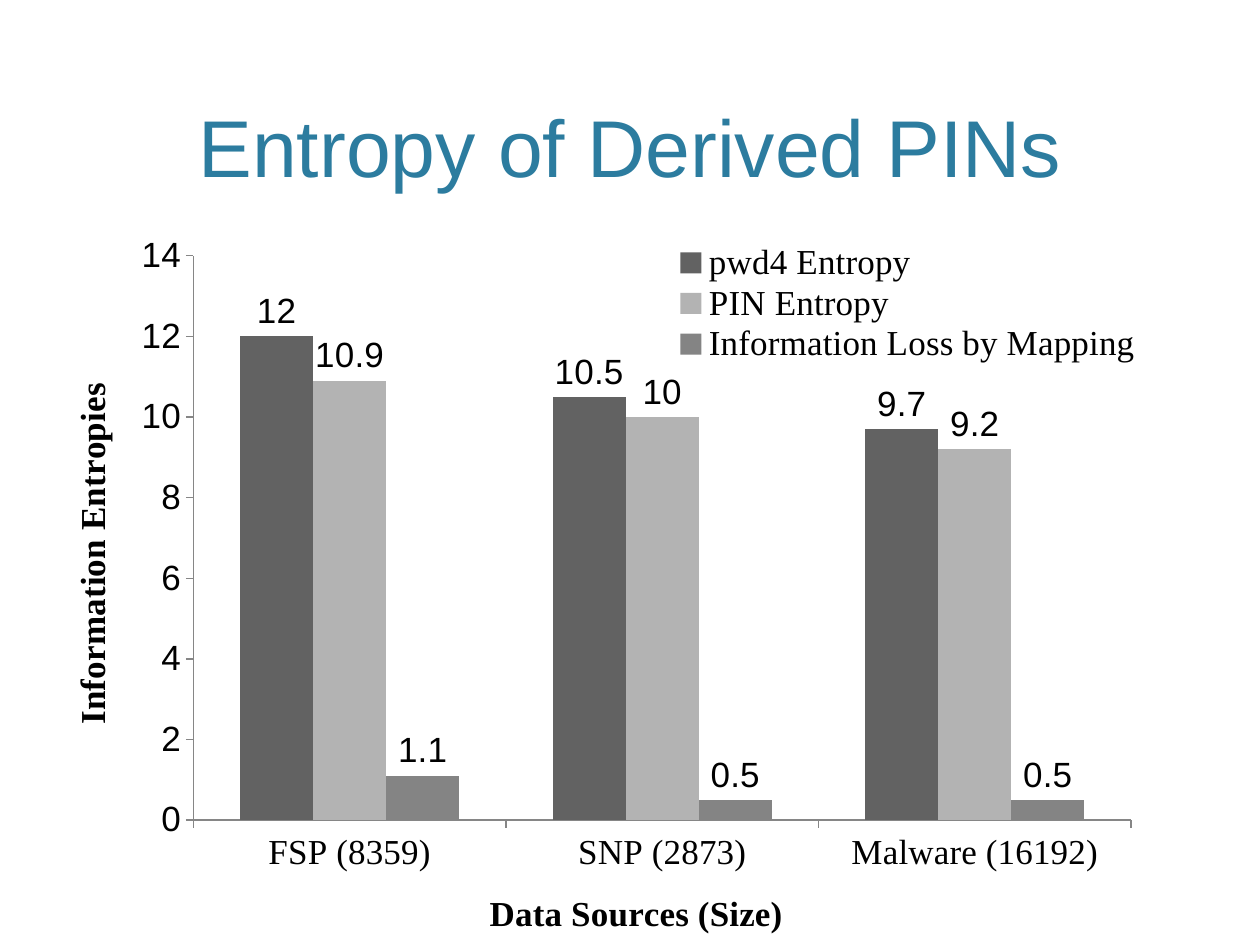
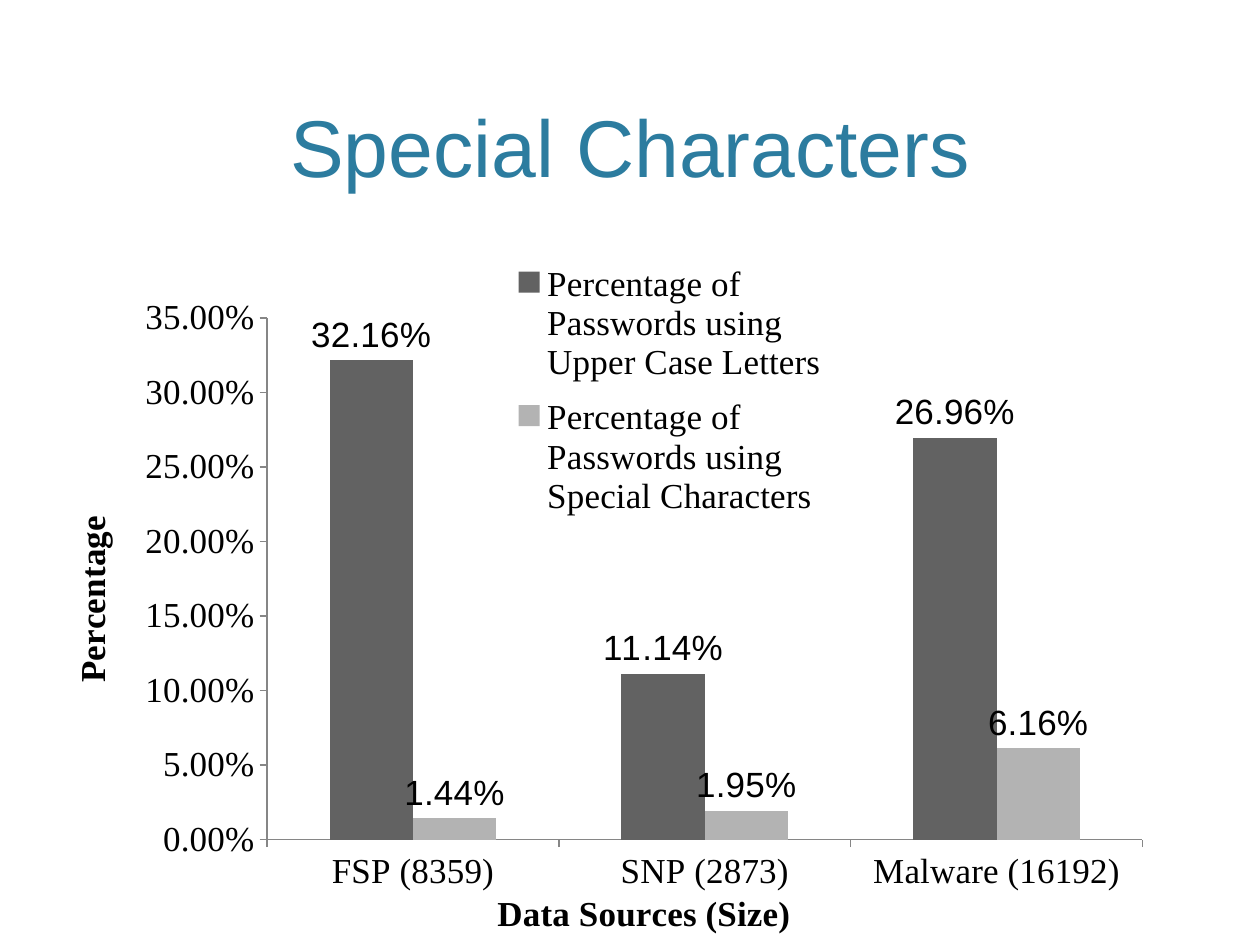
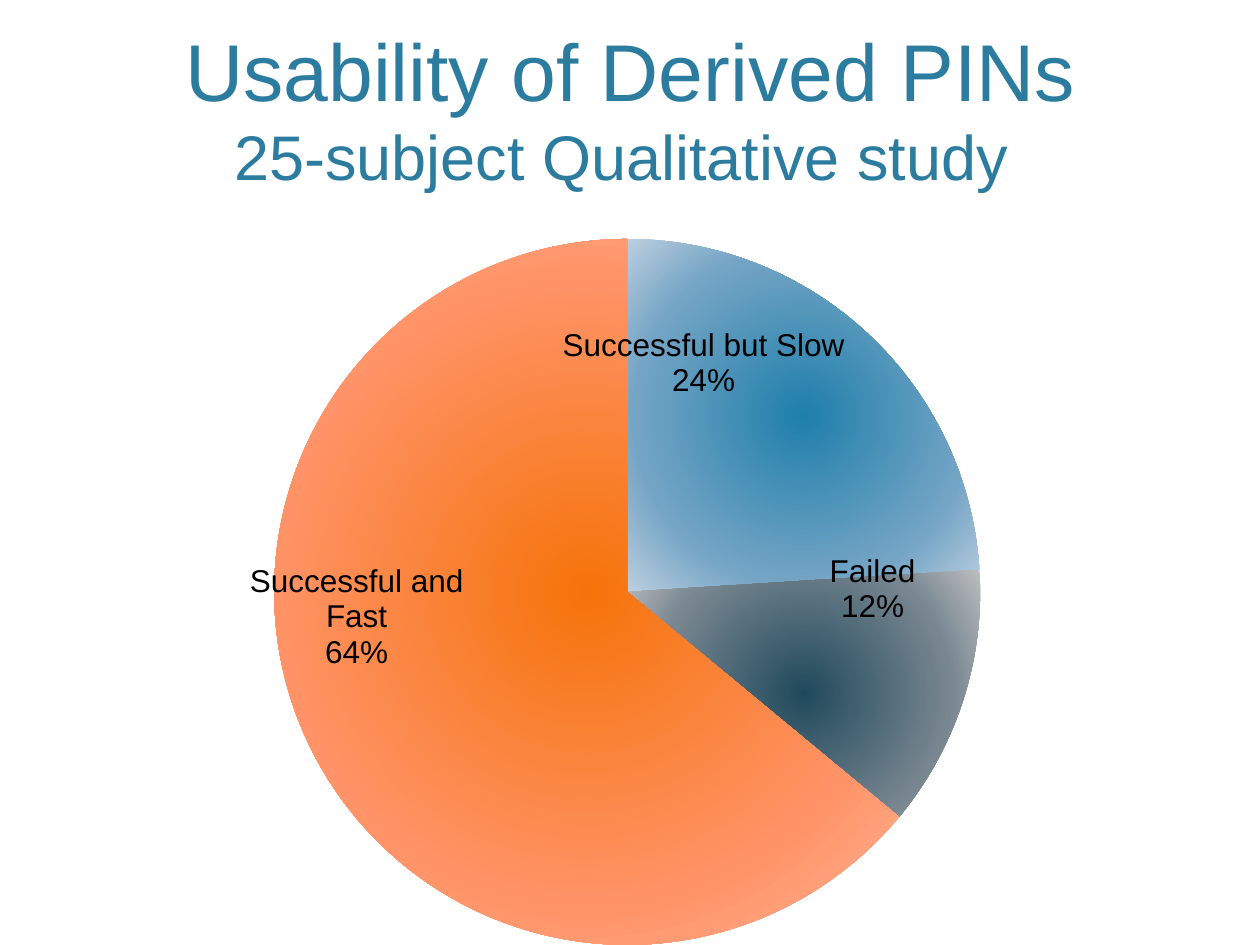
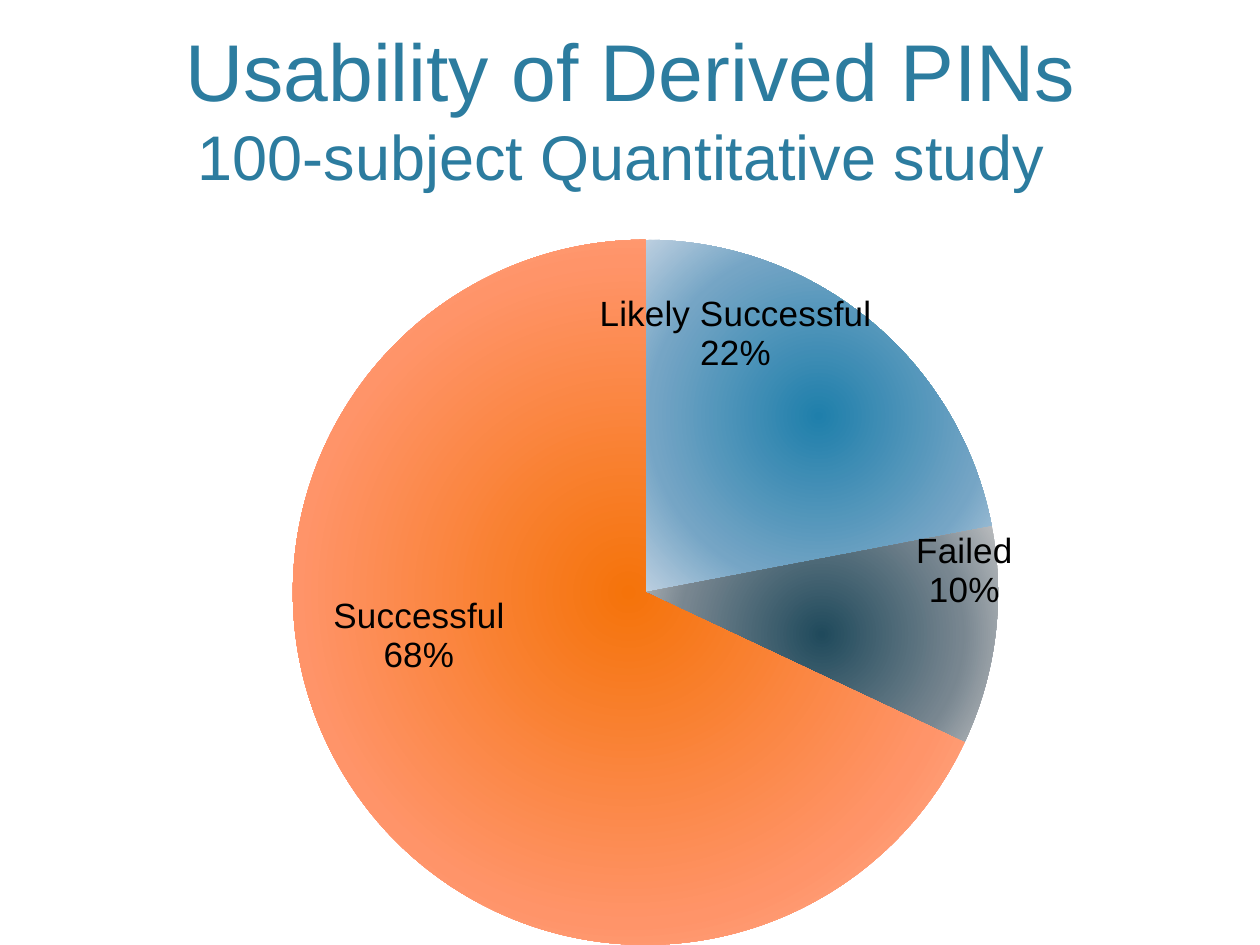
from pptx import Presentation
from pptx.chart.data import CategoryChartData
from pptx.dml.color import RGBColor
from pptx.enum.chart import XL_CHART_TYPE, XL_LABEL_POSITION, XL_LEGEND_POSITION, XL_TICK_MARK
from pptx.enum.text import MSO_ANCHOR, PP_ALIGN
from pptx.oxml import parse_xml
from pptx.oxml.ns import nsdecls, qn
from pptx.util import Inches, Pt

WIDTH, HEIGHT = Inches(10), Inches(7.5)
TITLE_BOX = (0.06, 0.016, 0.88, 0.195)
COLUMN_BOX = (0.05, 0.233, 0.9, 0.767)
PIE_BOX = (0.06, 0.24, 0.88, 0.76)

SANS, SERIF = "Arial", "Times New Roman"
BLACK = RGBColor(0x00, 0x00, 0x00)
TITLE_BLUE = RGBColor(0x2C, 0x7C, 0x9F)
AXIS_GRAY = RGBColor(0x86, 0x86, 0x86)
COLUMN_GRAYS = (RGBColor(0x62, 0x62, 0x62), RGBColor(0xB3, 0xB3, 0xB3), RGBColor(0x84, 0x84, 0x84))
SLICE_GRADIENTS = (
    (RGBColor(0x1F, 0x7F, 0xAB), RGBColor(0x75, 0xA5, 0xC5), RGBColor(0xBC, 0xCF, 0xE0)),
    (RGBColor(0x20, 0x4A, 0x5C), RGBColor(0x78, 0x86, 0x90), RGBColor(0xBC, 0xBE, 0xC0)),
    (RGBColor(0xF5, 0x73, 0x0A), RGBColor(0xFF, 0x94, 0x69), RGBColor(0xFF, 0xB4, 0x98)),
)
SOURCES = ("FSP (8359)", "SNP (2873)", "Malware (16192)")


def place(box):
    """Turn shares of the slide into left, top, width and height."""
    left, top, width, height = box
    return int(left * WIDTH), int(top * HEIGHT), int(width * WIDTH), int(height * HEIGHT)


def format_font(font, size=20, name=SANS, color=BLACK, bold=False):
    """Apply size, face, colour and weight to a font."""
    font.size, font.name, font.bold = Pt(size), name, bold
    font.color.rgb = color


def add_text(paragraph, text, **style):
    """Append a formatted run to a paragraph."""
    run = paragraph.add_run()
    run.text = text
    format_font(run.font, **style)


def add_title(slide, box, title, subtitle=None):
    """Place the centred slide title with an optional smaller second line."""
    frame = slide.shapes.add_textbox(*place(box)).text_frame
    frame.word_wrap = True
    frame.vertical_anchor = MSO_ANCHOR.BOTTOM
    paragraph = frame.paragraphs[0]
    paragraph.alignment = PP_ALIGN.CENTER
    add_text(paragraph, title, size=46, color=TITLE_BLUE)
    if subtitle:
        paragraph.add_line_break()
        add_text(paragraph, subtitle, size=36, color=TITLE_BLUE)


def set_layout(element, index, position, target=None, edge=True):
    """Give a chart part a manual layout in shares of the chart."""
    for old in element.findall(qn("c:layout")):
        element.remove(old)
    names = ("x", "y", "w", "h")[:len(position)]
    parts = f'<c:layoutTarget val="{target}"/>' if target else ""
    if edge:
        parts += '<c:xMode val="edge"/><c:yMode val="edge"/>'
    parts += "".join(f'<c:{name} val="{value}"/>' for name, value in zip(names, position))
    element.insert(index, parse_xml(
        f'<c:layout {nsdecls("c")}><c:manualLayout>{parts}</c:manualLayout></c:layout>'))


def add_chart(slide, box, kind, categories, series, plot_area, number_format="General"):
    """Add a chart without title whose plot area has a fixed place."""
    data = CategoryChartData(number_format=number_format)
    data.categories = categories
    for name, values in series:
        data.add_series(name, values)
    chart = slide.shapes.add_chart(kind, *place(box), data).chart
    chart.has_title = chart.has_legend = False
    format_font(chart.font)
    area = chart.plots[0]._element.getparent()
    set_layout(area, 0, plot_area, target="inner")
    return chart


def format_axis(axis, title, face):
    """Style an axis line, its labels and its bold title."""
    axis.has_major_gridlines = False
    axis.major_tick_mark = XL_TICK_MARK.OUTSIDE
    axis.format.line.color.rgb = AXIS_GRAY
    format_font(axis.tick_labels.font, name=face)
    axis.has_title = True
    add_text(axis.axis_title.text_frame.paragraphs[0], title, name=SERIF, bold=True)


def add_column_chart(slide, box, series, value_title, plot_area, legend_area, top, step,
                     gap=150, number_format="General", value_face=SANS):
    """Add a clustered column chart comparing the data sources."""
    chart = add_chart(slide, box, XL_CHART_TYPE.COLUMN_CLUSTERED, SOURCES, series,
                      plot_area, number_format)
    format_axis(chart.category_axis, "Data Sources (Size)", SERIF)
    axis = chart.value_axis
    format_axis(axis, value_title, value_face)
    axis.minimum_scale, axis.maximum_scale, axis.major_unit = 0, top, step
    axis.tick_labels.number_format = number_format
    axis.tick_labels.number_format_is_linked = False

    plot = chart.plots[0]
    plot.gap_width, plot.overlap, plot.vary_by_categories = gap, 0, False
    for column, color in zip(plot.series, COLUMN_GRAYS):
        column.format.fill.solid()
        column.format.fill.fore_color.rgb = color
        labels = column.data_labels
        labels.show_value = True
        labels.position = XL_LABEL_POSITION.OUTSIDE_END
        labels.number_format = number_format
        labels.number_format_is_linked = False
        format_font(labels.font)

    chart.has_legend = True
    legend = chart.legend
    legend.position = XL_LEGEND_POSITION.RIGHT
    legend.include_in_layout = False
    format_font(legend.font, name=SERIF)
    set_layout(legend._element, 1, legend_area)


def fill_radial(point, colors):
    """Fill a slice with a gradient that runs outwards from its centre."""
    point.format.line.fill.background()
    stops = "".join(f'<a:gs pos="{position}"><a:srgbClr val="{color}"/></a:gs>'
                    for position, color in zip((0, 68000, 100000), colors))
    gradient = parse_xml(
        f'<a:gradFill {nsdecls("a")} rotWithShape="1"><a:gsLst>{stops}</a:gsLst>'
        '<a:path path="circle"><a:fillToRect l="50000" t="50000" r="50000" b="50000"/></a:path>'
        '</a:gradFill>')
    point._element.find(f'.//{qn("c:dPt")}[last()]/{qn("c:spPr")}').insert(0, gradient)


def add_pie_chart(slide, box, slices, offsets, plot_area, label_size):
    """Add a pie chart with category and percentage on each slice."""
    categories, values = zip(*slices)
    chart = add_chart(slide, box, XL_CHART_TYPE.PIE, categories, [("Series 1", values)], plot_area)
    chart.plots[0].vary_by_categories = True
    series = chart.plots[0].series[0]
    for index, colors in enumerate(SLICE_GRADIENTS):
        point = series.points[index]
        fill_radial(point, colors)
        format_font(point.data_label.font, size=label_size)
        point.data_label.position = XL_LABEL_POSITION.CENTER
    labels = series.data_labels
    labels.show_value, labels.show_category_name, labels.show_percentage = False, True, True
    format_font(labels.font, size=label_size)
    for label, offset in zip(series._element.iter(qn("c:dLbl")), offsets):
        for name, value in (("showVal", "0"), ("showCatName", "1"), ("showPercent", "1")):
            label.find(qn(f"c:{name}")).set("val", value)
        label.append(parse_xml(f'<c:separator {nsdecls("c")}>\n</c:separator>'))
        set_layout(label, 1, offset, edge=False)


def main():
    """Build the four slides and save them."""
    presentation = Presentation()
    presentation.slide_width, presentation.slide_height = WIDTH, HEIGHT
    pages = (
        ("Entropy of Derived PINs", None, add_column_chart, COLUMN_BOX, dict(
            series=(("pwd4 Entropy", (12, 10.5, 9.7)),
                    ("PIN Entropy", (10.9, 10, 9.2)),
                    ("Information Loss by Mapping", (1.1, 0.5, 0.5))),
            value_title="Information Entropies", top=14, step=2, gap=128,
            plot_area=(0.115, 0.049, 0.827, 0.779), legend_area=(0.54, 0.03, 0.41, 0.17))),
        ("Special Characters", None, add_column_chart, COLUMN_BOX, dict(
            series=(("Percentage of Passwords using Upper Case Letters", (0.3216, 0.1114, 0.2696)),
                    ("Percentage of Passwords using Special Characters", (0.0144, 0.0195, 0.0616))),
            value_title="Percentage ", top=0.35, step=0.05,
            number_format="0.00%", value_face=SERIF,
            plot_area=(0.18, 0.135, 0.772, 0.72), legend_area=(0.39, 0.04, 0.29, 0.39))),
        ("Usability of Derived PINs", "25-subject Qualitative study ", add_pie_chart, PIE_BOX, dict(
            slices=(("Successful but Slow ", 24), ("Failed", 12), ("Successful and Fast", 64)),
            offsets=((-0.04, -0.14), (0.07, -0.08), (-0.1, -0.07)),
            plot_area=(0.016, 0.017, 0.963, 0.983), label_size=18)),
        ("Usability of Derived PINs", "100-subject Quantitative study ", add_pie_chart, PIE_BOX, dict(
            slices=(("Likely Successful", 22), ("Failed", 10), ("Successful", 68)),
            offsets=((-0.02, -0.17), (0.13, -0.06), (-0.07, -0.07)),
            plot_area=(0.028, 0.018, 0.972, 0.982), label_size=20)),
    )
    for title, subtitle, build, box, content in pages:
        slide = presentation.slides.add_slide(presentation.slide_layouts[6])
        add_title(slide, TITLE_BOX, title, subtitle)
        build(slide, box, **content)
    presentation.save("out.pptx")


if __name__ == "__main__":
    main()
